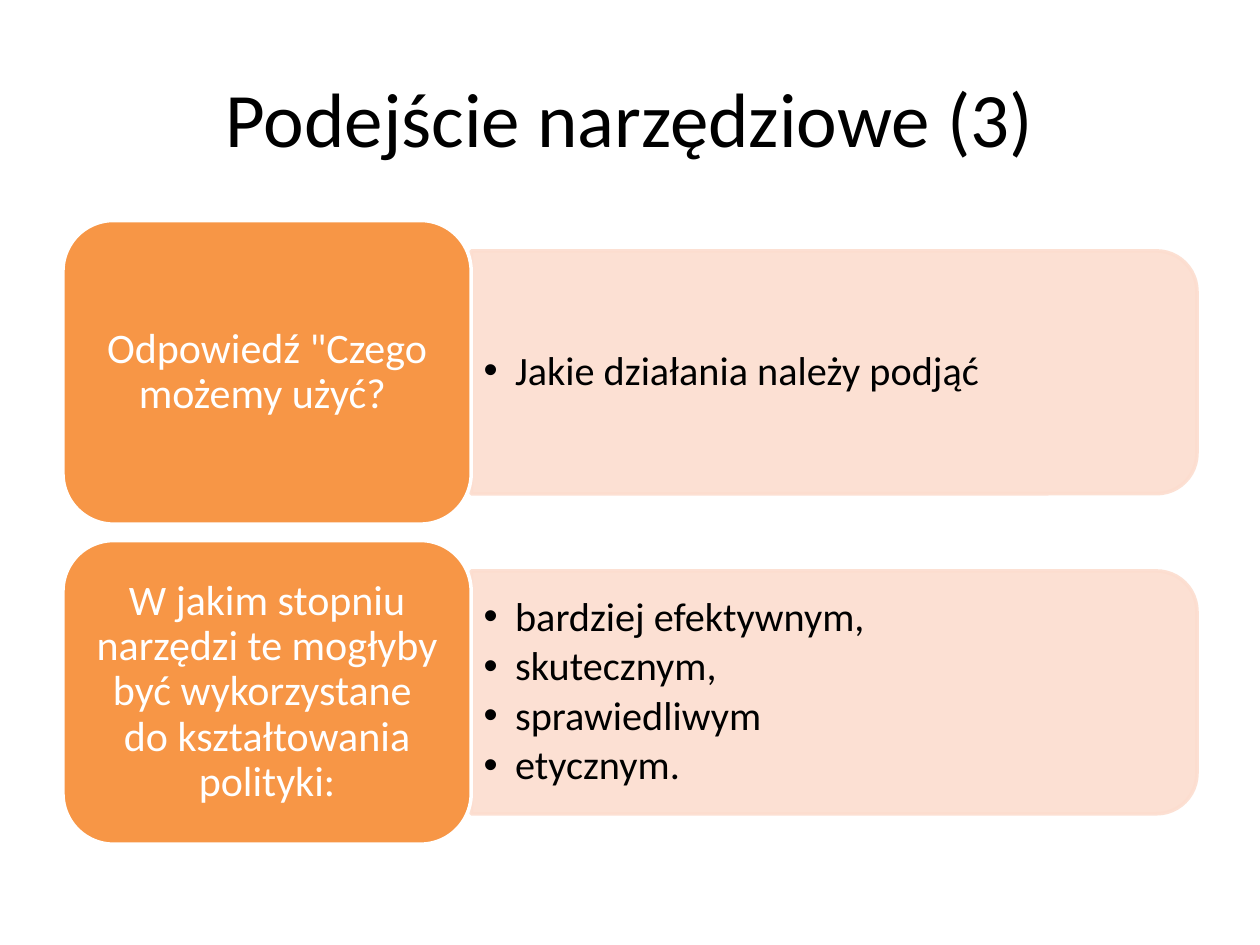
from dataclasses import dataclass

from lxml import etree
from pptx import Presentation
from pptx.dml.color import RGBColor
from pptx.enum.shapes import MSO_SHAPE
from pptx.enum.text import MSO_ANCHOR, PP_ALIGN
from pptx.oxml.ns import qn
from pptx.util import Inches, Pt

FONT = "Calibri"
BLACK, WHITE, ORANGE, PEACH = "000000", "FFFFFF", "F79646", "FCDDCF"
MARGIN = 0.5
CONTENT_WIDTH = 10 - 2 * MARGIN
QUESTION_WIDTH = CONTENT_WIDTH * 0.36
ANSWER_LEFT = MARGIN + QUESTION_WIDTH
ANSWER_WIDTH = CONTENT_WIDTH - QUESTION_WIDTH
FIRST_ROW_TOP, ROW_HEIGHT, ROW_PITCH = 1.75, 2.41, 2.54
PANEL_HEIGHT = ROW_HEIGHT * 0.8
QUESTION_INSET, ANSWER_INSET = 0.12, 0.09


@dataclass(frozen=True)
class Box:
    left: float
    top: float
    width: float
    height: float

    def lengths(self) -> tuple:
        return tuple(Inches(v) for v in (self.left, self.top, self.width, self.height))


@dataclass(frozen=True)
class TextStyle:
    size: float
    color: str
    align: PP_ALIGN = PP_ALIGN.CENTER
    line_spacing: float = 1.0
    space_after: float = 0
    bulleted: bool = False


@dataclass(frozen=True)
class Row:
    question: str
    answers: tuple[str, ...]


TITLE = TextStyle(44, BLACK)
QUESTION = TextStyle(24, WHITE, line_spacing=0.9, space_after=8.4)
ANSWER = TextStyle(23, BLACK, PP_ALIGN.LEFT, 0.9, 3.45, bulleted=True)

ROWS = (
    Row('Odpowiedź "Czego możemy użyć? ', ("Jakie działania należy podjąć",)),
    Row(
        "W jakim stopniu narzędzi te mogłyby być wykorzystane \vdo kształtowania polityki:",
        ("bardziej efektywnym,", "skutecznym,", "sprawiedliwym", "etycznym."),
    ),
)


def rgb(color: str) -> RGBColor:
    return RGBColor.from_string(color)


def add_bullet(paragraph) -> None:
    properties = paragraph._p.get_or_add_pPr()
    properties.set("marL", str(Inches(0.25)))
    properties.set("indent", str(Inches(-0.25)))
    etree.SubElement(properties, qn("a:buFont")).set("typeface", "Arial")
    etree.SubElement(properties, qn("a:buChar")).set("char", "•")


def add_text(shapes, box: Box, lines: tuple[str, ...], style: TextStyle) -> None:
    frame = shapes.add_textbox(*box.lengths()).text_frame
    frame.word_wrap = True
    frame.vertical_anchor = MSO_ANCHOR.MIDDLE
    frame.text = "\n".join(lines)
    for paragraph in frame.paragraphs:
        if style.bulleted:
            add_bullet(paragraph)
        paragraph.alignment = style.align
        paragraph.line_spacing = style.line_spacing
        paragraph.space_after = Pt(style.space_after)
        for run in paragraph.runs:
            run.font.name = FONT
            run.font.size = Pt(style.size)
            run.font.color.rgb = rgb(style.color)


def add_panel(shapes, kind: MSO_SHAPE, box: Box, fill: str, line: str):
    panel = shapes.add_shape(kind, *box.lengths())
    panel.shadow.inherit = False
    panel.fill.solid()
    panel.fill.fore_color.rgb = rgb(fill)
    panel.line.color.rgb = rgb(line)
    panel.line.width = Pt(2)
    return panel


def set_opacity(panel, percent: int) -> None:
    for color in panel._element.spPr.iter(qn("a:srgbClr")):
        etree.SubElement(color, qn("a:alpha")).set("val", str(percent * 1000))


def add_answer_panel(shapes, middle: float) -> None:
    """Turn a top-rounded rectangle so that its rounded end points right."""
    center = ANSWER_LEFT + ANSWER_WIDTH / 2
    upright = Box(center - PANEL_HEIGHT / 2, middle - ANSWER_WIDTH / 2,
                  PANEL_HEIGHT, ANSWER_WIDTH)
    panel = add_panel(shapes, MSO_SHAPE.ROUND_2_SAME_RECTANGLE, upright, PEACH, PEACH)
    panel.rotation = 90
    set_opacity(panel, 90)


def add_row(shapes, row: Row, top: float) -> None:
    middle = top + ROW_HEIGHT / 2
    add_answer_panel(shapes, middle)
    answer_height = PANEL_HEIGHT - 2 * ANSWER_INSET
    add_text(shapes, Box(ANSWER_LEFT, middle - answer_height / 2,
                         ANSWER_WIDTH - ANSWER_INSET, answer_height),
             row.answers, ANSWER)
    add_panel(shapes, MSO_SHAPE.ROUNDED_RECTANGLE,
              Box(MARGIN, top, QUESTION_WIDTH, ROW_HEIGHT), ORANGE, WHITE)
    add_text(shapes, Box(MARGIN + QUESTION_INSET, top + QUESTION_INSET,
                         QUESTION_WIDTH - 2 * QUESTION_INSET,
                         ROW_HEIGHT - 2 * QUESTION_INSET),
             (row.question,), QUESTION)


def main() -> None:
    presentation = Presentation()
    presentation.slide_width, presentation.slide_height = Inches(10), Inches(7.5)
    slide = presentation.slides.add_slide(presentation.slide_layouts[6])
    add_text(slide.shapes, Box(MARGIN, 0.3, CONTENT_WIDTH, 1.25),
             ("Podejście narzędziowe (3)",), TITLE)
    diagram = slide.shapes.add_group_shape().shapes
    for index, row in enumerate(ROWS):
        add_row(diagram, row, FIRST_ROW_TOP + index * ROW_PITCH)
    presentation.save("out.pptx")


if __name__ == "__main__":
    main()
